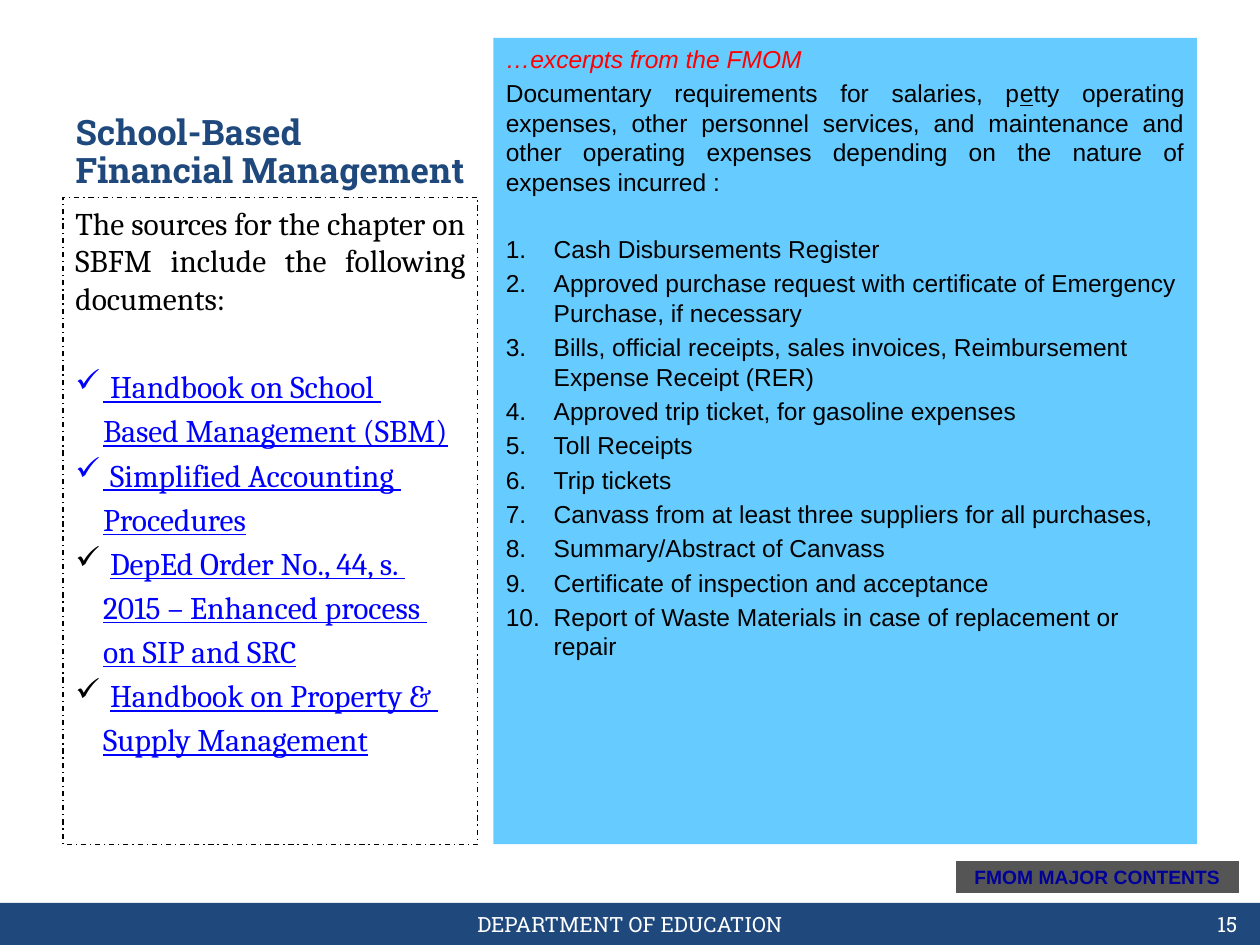
"""Build the school-based financial management slide."""
from dataclasses import dataclass

from lxml.etree import SubElement
from pptx import Presentation
from pptx.dml.color import RGBColor
from pptx.enum.dml import MSO_LINE
from pptx.enum.shapes import MSO_SHAPE
from pptx.enum.text import MSO_ANCHOR, MSO_AUTO_SIZE, PP_ALIGN
from pptx.oxml.ns import qn
from pptx.util import Inches, Pt


@dataclass(frozen=True)
class Theme:
    navy: str = "1F497D"
    sky: str = "66CCFF"
    red: str = "FF0000"
    black: str = "000000"
    white: str = "FFFFFF"
    link: str = "0000FF"
    button: str = "555555"
    button_text: str = "000099"
    slab: str = "Roboto Slab"
    serif: str = "Cambria"
    sans: str = "Arial"
    title_size: int = 20
    source_size: int = 18
    excerpt_size: int = 14
    button_size: int = 11
    footer_size: int = 12


THEME = Theme()
COLUMNS, ROWS = 120, 90
LEFT_PANEL = (6, 18.8, 39.5, 61.6)
RIGHT_PANEL = (47, 3.6, 67, 76.8)
FOOTER_ROW, FOOTER_ROWS = 86, 4

SOURCES = [
    (THEME.link, ["Handbook on School ", "Based Management (SBM)"]),
    (THEME.link, ["Simplified Accounting ", "Procedures"]),
    (THEME.black, ["DepEd Order No., 44, s. ", "2015 – Enhanced process ", "on SIP and SRC"]),
    (THEME.black, ["Handbook on Property & ", "Supply Management"]),
]
REQUIREMENTS = [
    "Cash Disbursements Register",
    "Approved purchase request with certificate of Emergency Purchase, if necessary",
    "Bills, official receipts, sales invoices, Reimbursement Expense Receipt (RER)",
    "Approved trip ticket, for gasoline expenses",
    "Toll Receipts",
    "Trip tickets",
    "Canvass from at least three suppliers for all purchases,",
    "Summary/Abstract of Canvass",
    "Certificate of inspection and acceptance",
    "Report of Waste Materials in case of replacement or repair",
]


class SlideBuilder:
    """Hold the theme and the current slide, and add elements on its grid."""

    def __init__(self, presentation, theme):
        self.presentation = presentation
        self.theme = theme
        self.slide = presentation.slides.add_slide(presentation.slide_layouts[5])

    def box(self, column, row, columns, rows):
        width = self.presentation.slide_width / COLUMNS
        height = self.presentation.slide_height / ROWS
        return [int(column * width), int(row * height), int(columns * width), int(rows * height)]

    def style(self, paragraph, name, size, color, bold=None, italic=None, underline=None):
        font = paragraph.font
        font.name, font.size = name, Pt(size)
        font.bold, font.italic, font.underline = bold, italic, underline
        font.color.rgb = RGBColor.from_string(color)

    def title(self, text, area):
        shape = self.slide.shapes.title
        shape.left, shape.top, shape.width, shape.height = self.box(*area)
        frame = shape.text_frame
        frame.text = text
        frame.auto_size = MSO_AUTO_SIZE.NONE
        frame.vertical_anchor = MSO_ANCHOR.BOTTOM
        paragraph = frame.paragraphs[0]
        paragraph.alignment = PP_ALIGN.LEFT
        paragraph.line_spacing = 0.9
        self.style(paragraph, self.theme.slab, self.theme.title_size, self.theme.navy, bold=True)

    def block(self, kind, area, fill):
        shape = self.slide.shapes.add_shape(kind, *self.box(*area))
        shape.shadow.inherit = False
        shape.fill.solid()
        shape.fill.fore_color.rgb = RGBColor.from_string(fill)
        shape.line.fill.background()
        return shape

    def panel(self, area, fill=None, line=None):
        shape = self.slide.shapes.add_textbox(*self.box(*area))
        shape.text_frame.word_wrap = True
        if fill:
            shape.fill.solid()
            shape.fill.fore_color.rgb = RGBColor.from_string(fill)
        if line:
            shape.line.color.rgb = RGBColor.from_string(line)
            shape.line.width = Pt(0.75)
            shape.line.dash_style = MSO_LINE.DASH_DOT
        return shape.text_frame

    def label(self, frame, text, alignment, name, size, color, bold=None):
        frame.text = text
        frame.vertical_anchor = MSO_ANCHOR.MIDDLE
        paragraph = frame.paragraphs[0]
        paragraph.alignment = alignment
        self.style(paragraph, name, size, color, bold)

    def paragraph(self, frame, texts, before, alignment=PP_ALIGN.LEFT, margin=0, hanging=0):
        first = frame.paragraphs[0]
        paragraph = frame.add_paragraph() if first.runs else first
        paragraph.alignment = alignment
        paragraph.space_before = Pt(before)
        properties = paragraph._p.get_or_add_pPr()
        properties.set("marL", str(Inches(margin)))
        properties.set("indent", str(-Inches(hanging)))
        for text in texts:
            paragraph.add_run().text = text
        return paragraph

    def bullet(self, paragraph, color):
        properties = paragraph._p.get_or_add_pPr()
        SubElement(SubElement(properties, qn("a:buClr")), qn("a:srgbClr"), val=color)
        SubElement(properties, qn("a:buChar"), char="✓")

    def number(self, paragraph):
        SubElement(paragraph._p.get_or_add_pPr(), qn("a:buAutoNum"), type="arabicPeriod")

    def sources(self, introduction, documents):
        theme = self.theme
        frame = self.panel(LEFT_PANEL, line=theme.black)
        opening = self.paragraph(frame, [introduction], 3.6, PP_ALIGN.JUSTIFY)
        self.style(opening, theme.serif, theme.source_size, theme.black)
        for document, (color, lines) in enumerate(documents):
            for index, line in enumerate(lines):
                starts = index == 0
                before = 28.8 if starts and document == 0 else 3.6
                texts = [" ", line] if starts else [line]
                hanging = 0.22 if starts else 0
                item = self.paragraph(frame, texts, before, PP_ALIGN.JUSTIFY, 0.22, hanging)
                if starts:
                    self.bullet(item, color)
                    item.runs[0].font.underline = color == theme.link
                    item.runs[0].font.color.rgb = RGBColor.from_string(color)
                self.style(item, theme.serif, theme.source_size, theme.link, underline=True)

    def excerpt(self, heading, introduction, requirements):
        theme = self.theme
        frame = self.panel(RIGHT_PANEL, fill=theme.sky)
        opening = self.paragraph(frame, [heading], 2.8)
        self.style(opening, theme.sans, theme.excerpt_size, theme.red, italic=True)
        body = self.paragraph(frame, introduction, 2.8, PP_ALIGN.JUSTIFY)
        body.runs[1].font.underline = True
        self.style(body, theme.sans, theme.excerpt_size, theme.black)
        for index, requirement in enumerate(requirements):
            item = self.paragraph(frame, [requirement], 2.8 if index else 21.8, margin=0.38, hanging=0.38)
            self.number(item)
            self.style(item, theme.sans, theme.excerpt_size, theme.black)

    def footer(self, department, page):
        theme = self.theme
        self.block(MSO_SHAPE.RECTANGLE, (0, FOOTER_ROW, COLUMNS, FOOTER_ROWS), theme.navy)
        for text, column, columns, alignment in (
            (department, 41, 38, PP_ALIGN.CENTER),
            (page, 91, 28, PP_ALIGN.RIGHT),
        ):
            frame = self.panel((column, FOOTER_ROW, columns, FOOTER_ROWS))
            self.label(frame, text, alignment, theme.slab, theme.footer_size, theme.white)

    def button(self, text, area):
        theme = self.theme
        shape = self.block(MSO_SHAPE.ACTION_BUTTON_CUSTOM, area, theme.button)
        shape.text_frame.word_wrap = False
        self.label(shape.text_frame, text, PP_ALIGN.CENTER, theme.sans, theme.button_size, theme.button_text, True)


def main():
    presentation = Presentation()
    presentation.slide_width, presentation.slide_height = Inches(10), Inches(7.5)
    builder = SlideBuilder(presentation, THEME)
    builder.footer("DEPARTMENT OF EDUCATION", "15")
    builder.title("School-Based Financial Management", (6, 3.6, 39.5, 15.2))
    builder.excerpt("…excerpts from the FMOM", [
        "Documentary requirements for salaries, p", "e",
        "tty operating expenses, other personnel services, and maintenance and other "
        "operating expenses depending on the nature of expenses incurred :",
    ], REQUIREMENTS)
    builder.sources("The sources for the chapter on SBFM include the following documents:", SOURCES)
    builder.button("FMOM MAJOR CONTENTS", (91, 82, 27, 3))
    presentation.save("out.pptx")


if __name__ == "__main__":
    main()
